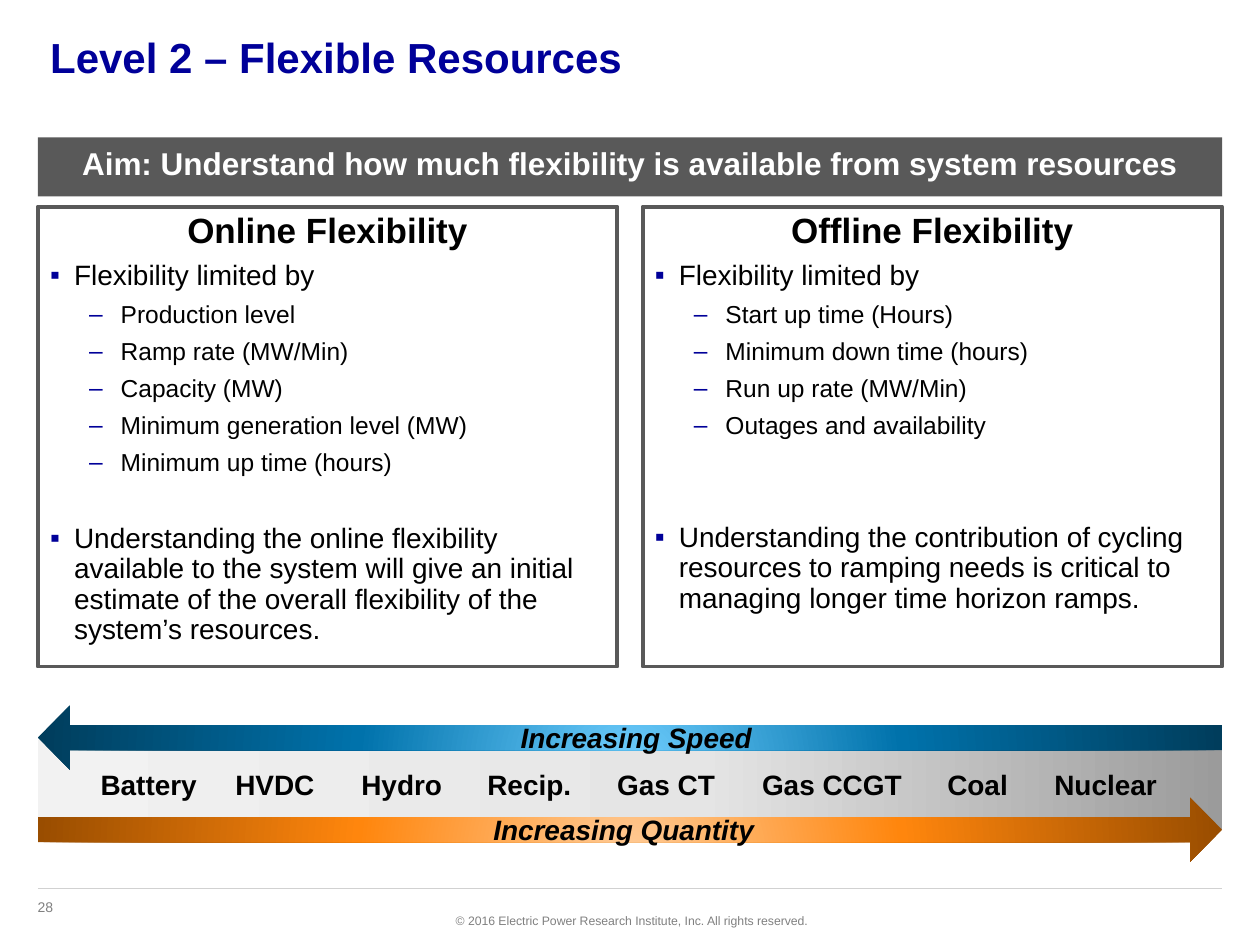
"""Build the Level 2 flexible resources slide."""
from dataclasses import dataclass
from itertools import pairwise

from lxml import etree
from pptx import Presentation
from pptx import util as u
from pptx.dml.color import RGBColor
from pptx.enum import shapes, text
from pptx.oxml.ns import qn

NAVY = RGBColor(0x00, 0x00, 0x99)
DARK = RGBColor(0x59, 0x59, 0x59)
GRAY = RGBColor(0x80, 0x80, 0x80)
PALE = RGBColor(0xD1, 0xD1, 0xD1)
BLACK = RGBColor(0, 0, 0)
WHITE = RGBColor(255, 255, 255)

SILVERS = ((0, RGBColor(0x9B, 0x9B, 0x9B)), (44, RGBColor(0xE5, 0xE5, 0xE5)),
           (100, RGBColor(0xF2, 0xF2, 0xF2)))
BLUES = ((0, RGBColor(0x70, 0xCF, 0xFF)), (46, RGBColor(0x00, 0x72, 0xAB)),
         (100, RGBColor(0x00, 0x3D, 0x5C)))
ORANGES = ((0, RGBColor(0xFF, 0xCC, 0x99)), (46, RGBColor(0xFF, 0x86, 0x0D)),
           (100, RGBColor(0x99, 0x4D, 0x00)))

LEFT, WIDTH = 0.3, 9.4
BAND_TOP, BAND_HEIGHT = 5.87, 0.71
SHAPE = shapes.MSO_SHAPE
TOP, MIDDLE = text.MSO_ANCHOR.TOP, text.MSO_ANCHOR.MIDDLE
CENTER, RIGHT = text.PP_ALIGN.CENTER, text.PP_ALIGN.RIGHT


@dataclass
class Panel:
    left: float
    heading: str
    limits: tuple
    summary: str
    gap: float


@dataclass
class Arrow:
    top: float
    kind: int
    label: str
    stops: tuple


PANELS = (
    Panel(0.3, "Online Flexibility",
          ("Production level", "Ramp rate (MW/Min)", "Capacity (MW)",
           "Minimum generation level (MW)", "Minimum up time (hours)"),
          "Understanding the online flexibility available to the system will give "
          "an initial estimate of the overall flexibility of the system’s resources.", 21.5),
    Panel(5.1, "Offline Flexibility",
          ("Start up time (Hours)", "Minimum down time (hours)",
           "Run up rate (MW/Min)", "Outages and availability"),
          "Understanding the contribution of cycling resources to ramping needs is "
          "critical to managing longer time horizon ramps.", 42),
)
ARROWS = (
    Arrow(5.6, SHAPE.LEFT_ARROW, "Increasing Speed", BLUES),
    Arrow(6.33, SHAPE.RIGHT_ARROW, "Increasing Quantity", ORANGES),
)
RESOURCES = ("Battery", "HVDC", "Hydro", "Recip.", "Gas CT", "Gas CCGT", "Coal", "Nuclear")
RESOURCE_EDGES = (0.7, 1.77, 2.77, 3.77, 4.8, 5.95, 7.42, 8.27, 9.4)


def add_text(tf, content: str, *, size: float, color=BLACK, bold=False, italic=False,
             align=text.PP_ALIGN.LEFT, level=0, margin=0.0, indent=0.0, bullet="",
             spacing=None, before=0, after=0) -> None:
    """Append one formatted paragraph to a text frame."""
    p = tf.paragraphs[0] if not tf.text else tf.add_paragraph()
    p.alignment, p.level = align, level
    ppr = p._p.get_or_add_pPr()
    ppr.set("marL", str(u.Inches(margin)))
    ppr.set("indent", str(u.Inches(indent)))
    if bullet:
        clr = etree.SubElement(ppr, qn("a:buClr"))
        etree.SubElement(clr, qn("a:srgbClr"), val=str(NAVY))
        etree.SubElement(ppr, qn("a:buFont"), typeface="Arial")
        etree.SubElement(ppr, qn("a:buChar"), char=bullet)
    if spacing:
        p.line_spacing = spacing
    p.space_before, p.space_after = u.Pt(before), u.Pt(after)
    r = p.add_run()
    r.text = content
    font = r.font
    font.name, font.size, font.bold, font.italic = "Arial", u.Pt(size), bold, italic
    font.color.rgb = color


def add_box(s, left: float, top: float, width: float, height: float, wrap=True, anchor=TOP):
    """Add a plain text box and return its text frame."""
    tf = s.shapes.add_textbox(*map(u.Inches, (left, top, width, height))).text_frame
    tf.word_wrap, tf.vertical_anchor = wrap, anchor
    return tf


def add_shape(s, kind: int, left: float, top: float, width: float, height: float, anchor=TOP):
    """Add a preset shape without fill, line or shadow."""
    sp = s.shapes.add_shape(kind, *map(u.Inches, (left, top, width, height)))
    sp.shadow.inherit = False
    sp.fill.background()
    sp.line.fill.background()
    sp.text_frame.word_wrap = True
    sp.text_frame.vertical_anchor = anchor
    return sp


def set_gradient(sp, stops: tuple, radial: bool) -> None:
    """Fill a shape with a circular or a right-to-left gradient."""
    grad = etree.Element(qn("a:gradFill"), rotWithShape="1")
    gs_list = etree.SubElement(grad, qn("a:gsLst"))
    for pos, color in stops:
        gs = etree.SubElement(gs_list, qn("a:gs"), pos=str(pos * 1000))
        etree.SubElement(gs, qn("a:srgbClr"), val=str(color))
    if radial:
        circle = etree.SubElement(grad, qn("a:path"), path="circle")
        etree.SubElement(circle, qn("a:fillToRect"), l="50000", t="130000",
                         r="50000", b="-30000")
    else:
        etree.SubElement(grad, qn("a:lin"), ang="10800000", scaled="0")
    props = sp._element.spPr
    props.replace(props.find(qn("a:noFill")), grad)


def add_panel(s, panel: Panel) -> None:
    """Draw one outlined panel with its heading and bullets."""
    sp = add_shape(s, SHAPE.RECTANGLE, panel.left, 1.64, 4.6, 3.65)
    sp.line.color.rgb = DARK
    sp.line.width = u.Pt(2.25)
    tf = sp.text_frame
    common = dict(spacing=0.9, after=6)
    point = dict(size=16, margin=0.19, indent=-0.19, bullet="▪", **common)
    add_text(tf, panel.heading, size=20, bold=True, align=CENTER, **common)
    add_text(tf, "Flexibility limited by", **point)
    for limit in panel.limits:
        add_text(tf, limit, size=14, level=1, margin=0.56, indent=-0.25, bullet="–", **common)
    add_text(tf, panel.summary, before=panel.gap, **point)


def add_resources(s) -> None:
    """Draw the shaded band with one label per resource."""
    band = add_shape(s, SHAPE.RECTANGLE, LEFT, BAND_TOP, WIDTH, BAND_HEIGHT)
    set_gradient(band, SILVERS, radial=False)
    for name, (start, end) in zip(RESOURCES, pairwise(RESOURCE_EDGES)):
        tf = add_box(s, start, BAND_TOP, end - start, BAND_HEIGHT, anchor=MIDDLE)
        add_text(tf, name, size=16, bold=True)


def add_arrow(s, arrow: Arrow) -> None:
    """Draw one labelled gradient arrow."""
    sp = add_shape(s, arrow.kind, LEFT, arrow.top, WIDTH, 0.51, MIDDLE)
    sp.adjustments[0], sp.adjustments[1] = 0.39, 0.5
    set_gradient(sp, arrow.stops, radial=True)
    add_text(sp.text_frame, arrow.label, size=16, bold=True, italic=True, align=CENTER)


def add_footer(s) -> None:
    """Draw the rule, page number and copyright line."""
    add_text(add_box(s, 0.2, 7.08, 0.66, 0.24), "28", size=8, color=GRAY)
    rule = s.shapes.add_connector(shapes.MSO_CONNECTOR.STRAIGHT, u.Inches(LEFT), u.Inches(7.05),
                                  u.Inches(LEFT + WIDTH), u.Inches(7.05))
    rule.line.color.rgb = PALE
    rule.line.width = u.Pt(0.75)
    etree.SubElement(rule._element.spPr, qn("a:effectLst"))
    add_text(add_box(s, 3.49, 7.2, 3.02, 0.22, wrap=False),
             "© 2016 Electric Power Research Institute, Inc. All rights reserved.",
             size=7, color=GRAY, align=RIGHT)


def main() -> None:
    """Build and save the slide."""
    prs = Presentation()
    prs.slide_width, prs.slide_height = u.Inches(10), u.Inches(7.5)
    s = prs.slides.add_slide(prs.slide_layouts[6])
    add_footer(s)
    add_text(add_box(s, LEFT, 0.2, WIDTH, 0.8), "Level 2 – Flexible Resources",
             size=24, color=NAVY, bold=True)
    for panel in PANELS:
        add_panel(s, panel)
    aim = add_shape(s, SHAPE.RECTANGLE, LEFT, 1.09, WIDTH, 0.47)
    aim.fill.solid()
    aim.fill.fore_color.rgb = DARK
    add_text(aim.text_frame,
             "Aim: Understand how much flexibility is available from system resources",
             size=18, color=WHITE, bold=True, align=CENTER)
    add_resources(s)
    for arrow in ARROWS:
        add_arrow(s, arrow)
    prs.save("out.pptx")


if __name__ == "__main__":
    main()
